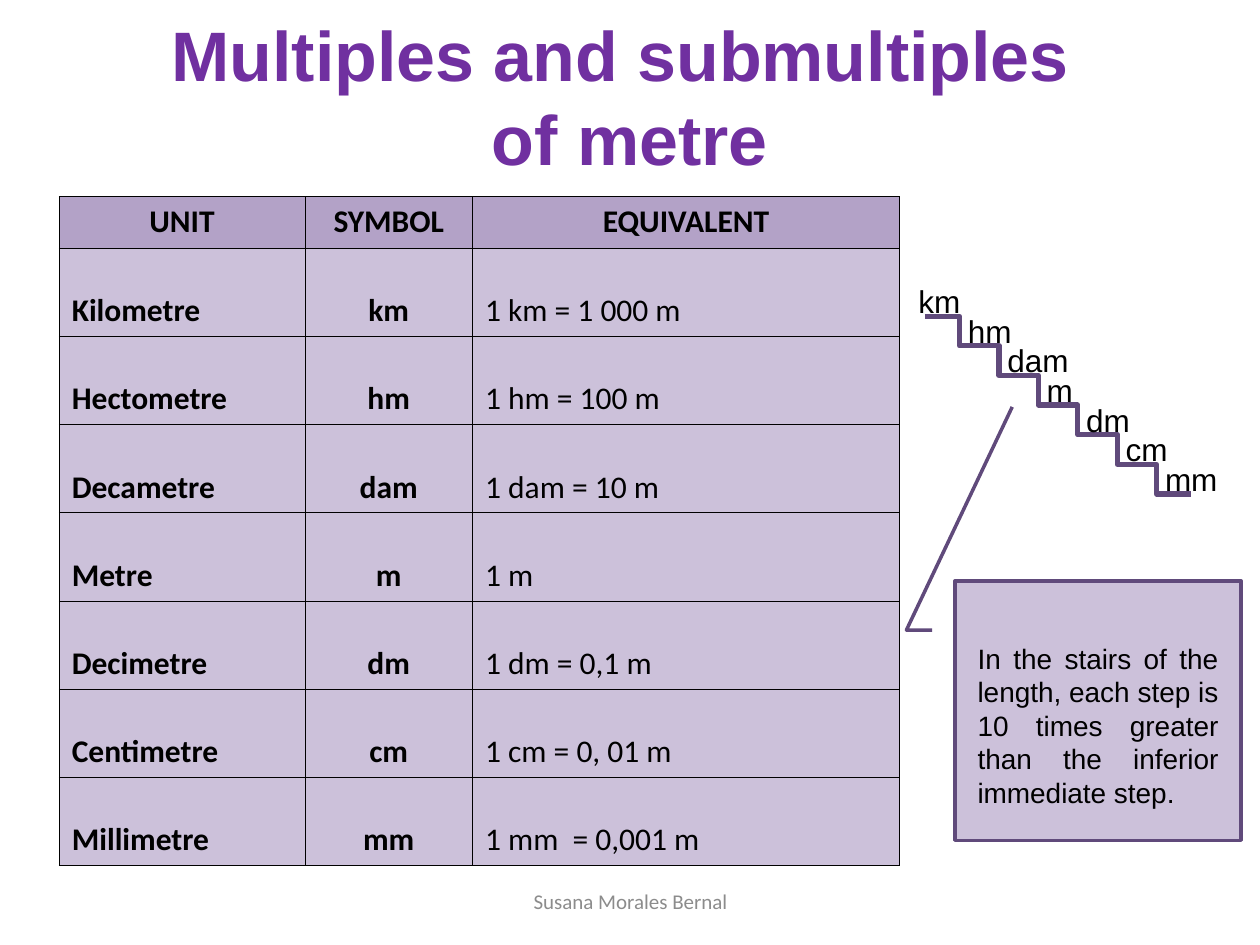
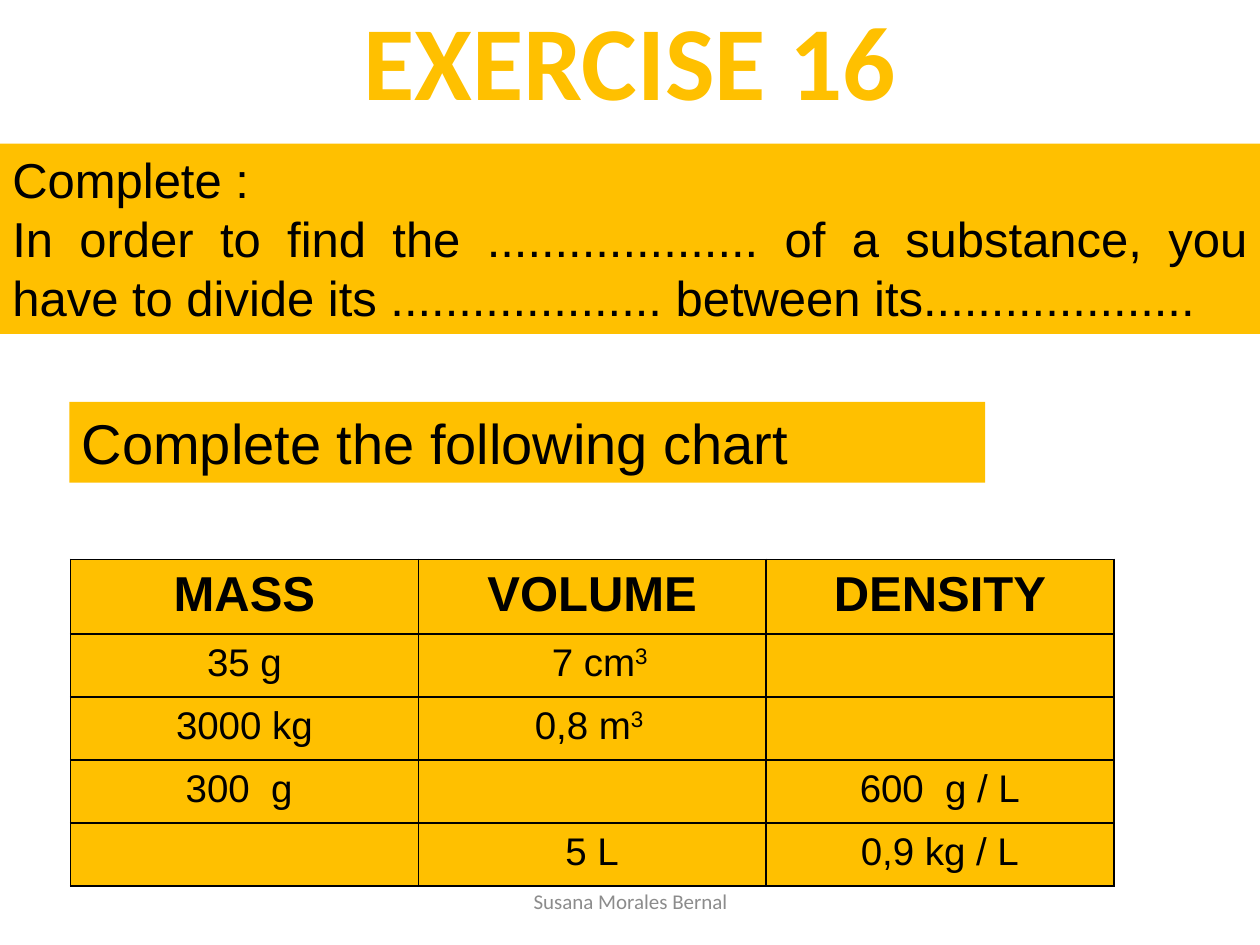
from lxml.etree import SubElement as Sub
from pptx import Presentation
from pptx.dml.color import RGBColor as RGB
from pptx.enum.shapes import MSO_CONNECTOR as Link, MSO_SHAPE as Kind
from pptx.enum.text import MSO_ANCHOR as Anchor, PP_ALIGN as Align
from pptx.oxml.ns import qn
from pptx.util import Inches as Inch, Pt

WIDE, HIGH = 10, 7.5
PURPLE, DEEP, MID, PALE = "7030A0", "604A7B", "B3A2C7", "CCC1DA"
GOLD, BLACK, GREY = "FFC000", "000000", "8C8C8C"
LEFT, CENTER, JUST = Align.LEFT, Align.CENTER, Align.JUSTIFY
SUP = "3 "

HEADS = ["UNIT", "SYMBOL", "EQUIVALENT"]
UNITS = [
    ("Kilometre", "km", "1 km = 1 000 m"),
    ("Hectometre", "hm", "1 hm = 100 m"),
    ("Decametre", "dam", "1 dam = 10 m"),
    ("Metre", "m", "1 m"),
    ("Decimetre", "dm", "1 dm = 0,1 m"),
    ("Centimetre", "cm", "1 cm = 0, 01 m"),
    ("Millimetre", "mm", "1 mm  = 0,001 m"),
]
TITLE = ["Multiples and submultiples ", "of metre"]
NOTE = ["In the stairs of the length, each step is 10 times greater "
        "than the inferior immediate step. "]
AUTHOR = ["Susana Morales Bernal"]

DOTS = "." * 20
TASK = ["Complete :",
        f"In order to find the {DOTS} of a substance, you have to "
        f"divide its {DOTS} between its{DOTS}"]
CHART = [
    ("MASS", "VOLUME", "DENSITY"),
    ("35 g", ("  7 cm", SUP), ""),
    ("3000 kg", ("0,8 m", SUP), ""),
    ("300  g ", "", "600  g / L"),
    ("", "5 L", "0,9 kg / L"),
]


def color(code):
    return RGB.from_string(code)


def paint(fill, code):
    fill.solid()
    fill.fore_color.rgb = color(code)


def write(frame, paras, size, font="Arial", ink=BLACK, bold=False, align=LEFT):
    for i, parts in enumerate(paras):
        para = frame.add_paragraph() if i else frame.paragraphs[0]
        para.alignment = align
        for part in [parts] if isinstance(parts, str) else parts:
            run = para.add_run()
            run.text = part
            run.font.size, run.font.name, run.font.bold = Pt(size), font, bold
            run.font.color.rgb = color(ink)
            if part == SUP:
                run.font._element.set("baseline", "30000")


def text(slide, area, paras, size, fill=None, anchor=Anchor.TOP, **style):
    spot = [Inch(n) for n in area]
    if fill:
        box = slide.shapes.add_shape(Kind.RECTANGLE, *spot)
        box.shadow.inherit = False
        paint(box.fill, fill)
        box.line.fill.background()
    else:
        box = slide.shapes.add_textbox(*spot)
    box.text_frame.word_wrap = True
    box.text_frame.vertical_anchor = anchor
    write(box.text_frame, paras, size, **style)


def edge(cell, width):
    props = cell._tc.get_or_add_tcPr()
    for i, side in enumerate(("lnL", "lnR", "lnT", "lnB")):
        line = props.makeelement(qn("a:" + side), {"w": str(Pt(width))})
        tint = Sub(Sub(line, qn("a:solidFill")), qn("a:srgbClr"))
        tint.set("val", BLACK)
        props.insert(i, line)


def grid(slide, left, top, cols, rows, data, width, pad, dress):
    frame = slide.shapes.add_table(len(rows), len(cols), Inch(left), Inch(top),
                                   Inch(sum(cols)), Inch(sum(rows)))
    table = frame.table
    table.horz_banding = False
    for part, size in zip(table.columns, cols):
        part.width = Inch(size)
    for part, size in zip(table.rows, rows):
        part.height = Inch(size)
    for r, row in enumerate(data):
        for c, value in enumerate(row):
            cell = table.cell(r, c)
            cell.margin_left = cell.margin_right = Inch(pad)
            cell.margin_top = cell.margin_bottom = Inch(pad / 2)
            fill, anchor, style = dress(r, c)
            paint(cell.fill, fill)
            cell.vertical_anchor = anchor
            edge(cell, width)
            if value:
                write(cell.text_frame, [value], **style)


def unit(r, c):
    style = dict(size=18, font="Calibri", bold=r == 0 or c < 2,
                 align=CENTER if r == 0 or c == 1 else LEFT)
    return (PALE if r else MID), (Anchor.BOTTOM if r else Anchor.TOP), style


def sample(r, c):
    style = dict(size=22 if r else 28, bold=r == 0, align=CENTER)
    return GOLD, Anchor.TOP, style


def stairs(slide, left, top, run, rise):
    for i in range(len(UNITS) - 1):
        x, y = left + i * run, top + i * rise
        step = slide.shapes.add_connector(Link.ELBOW, Inch(x), Inch(y),
                                          Inch(x + 0.55), Inch(y + rise))
        step.line.color.rgb = color(DEEP)
        step.line.width = Pt(3)
        Sub(step._element.spPr, qn("a:effectLst"))
    for i, (_, sign, _) in enumerate(UNITS):
        x = left - 0.07 + i * run if i else left - 0.15
        text(slide, (x, top - 0.32 + i * rise, 0.86, 0.4), [sign], 18)


def callout(slide):
    box = slide.shapes.add_shape(Kind.LINE_CALLOUT_2, Inch(7.58), Inch(4.61),
                                 Inch(2.27), Inch(2.06))
    box.shadow.inherit = False
    paint(box.fill, PALE)
    box.line.color.rgb = color(DEEP)
    box.line.width = Pt(2)
    for i, n in enumerate((0.19, -0.08, 0.19, -0.17, -0.67, 0.2)):
        box.adjustments[i] = n
    text(slide, (7.66, 5.04, 2.11, 1.45), NOTE, 16, align=JUST)


def page(deck):
    return deck.slides.add_slide(deck.slide_layouts[6])


def foot(slide):
    text(slide, (3.42, 6.95, 3.17, 0.4), AUTHOR, 12, font="Calibri", ink=GREY,
         anchor=Anchor.MIDDLE, align=CENTER)


def metre(deck):
    slide = page(deck)
    text(slide, (0, 0.04, WIDE, 1.45), TITLE, 40, ink=PURPLE, bold=True,
         align=CENTER)
    grid(slide, 0.47, 1.56, (1.95, 1.33, 3.39), [0.41] + [0.7] * len(UNITS),
         [HEADS] + UNITS, 0.5, 0.1, unit)
    stairs(slide, 7.34, 2.51, 0.313, 0.235)
    callout(slide)
    foot(slide)


def density(deck):
    slide = page(deck)
    text(slide, (0.5, -0.16, WIDE - 1, 1.25), ["EXERCISE 16"], 60,
         font="Calibri", ink=GOLD, bold=True, anchor=Anchor.MIDDLE,
         align=CENTER)
    text(slide, (0, 1.14, WIDE, 1.51), TASK, 28, fill=GOLD, align=JUST)
    grid(slide, 0.56, 4.44, [2.76] * 3, [0.59] + [0.5] * 4, CHART, 1, 0.12,
         sample)
    text(slide, (0.55, 3.19, 7.27, 0.64), ["Complete the following chart"], 32,
         fill=GOLD)
    foot(slide)


def main():
    deck = Presentation()
    deck.slide_width, deck.slide_height = Inch(WIDE), Inch(HIGH)
    metre(deck)
    density(deck)
    deck.save("out.pptx")


if __name__ == "__main__":
    main()
